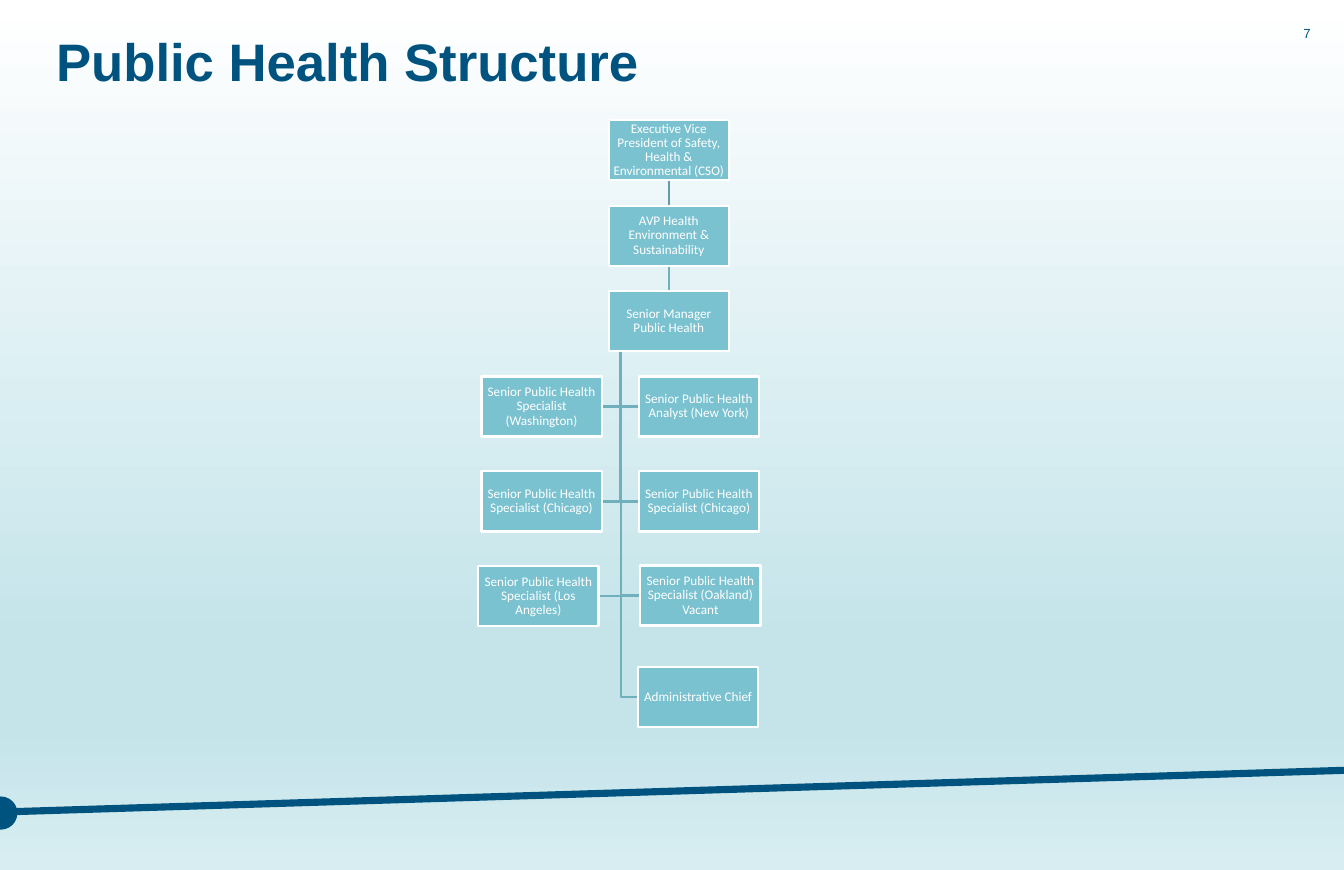
from copy import deepcopy

from lxml import etree
from pptx import Presentation
from pptx.dml.color import RGBColor
from pptx.enum.shapes import MSO_CONNECTOR, MSO_SHAPE
from pptx.enum.text import MSO_ANCHOR, MSO_AUTO_SIZE, PP_ALIGN
from pptx.oxml.ns import qn
from pptx.util import Pt

PX = 9144
STRAIGHT = MSO_CONNECTOR.STRAIGHT
RECTANGLE, OVAL = MSO_SHAPE.RECTANGLE, MSO_SHAPE.OVAL
TOP, MIDDLE = MSO_ANCHOR.TOP, MSO_ANCHOR.MIDDLE
LEFT, CENTER, RIGHT = PP_ALIGN.LEFT, PP_ALIGN.CENTER, PP_ALIGN.RIGHT
NO_AUTOFIT = MSO_AUTO_SIZE.NONE

THEME = {
    "navy": RGBColor.from_string("00537E"),
    "box": RGBColor.from_string("7BC2D0"),
    "link": RGBColor.from_string("70B0BD"),
    "top_link": RGBColor.from_string("639BA7"),
    "white": RGBColor.from_string("FFFFFF"),
    "background": [(0, "FFFFFF"), (0.74, "C4E4EA"), (0.83, "C4E4EA"), (1, "D7EDF1")],
    "heading_font": "Arial",
    "box_font": "Calibri",
    "title_size": Pt(48),
    "small_size": Pt(12),
    "line_width": Pt(2),
    "sweep_width": Pt(6.5),
}

presentation = Presentation()
presentation.slide_width = 1700 * PX
presentation.slide_height = 1100 * PX
slide = presentation.slides.add_slide(presentation.slide_layouts[5])
shapes = slide.shapes


def write(shape, text, font_name, size, color, alignment, anchor, inset=0):
    frame = shape.text_frame
    frame.text = text
    frame.word_wrap = True
    frame.auto_size = NO_AUTOFIT
    frame.vertical_anchor = anchor
    frame.margin_left = frame.margin_right = inset * PX
    frame.margin_top = frame.margin_bottom = inset * PX
    paragraph = frame.paragraphs[0]
    paragraph.alignment = alignment
    font = paragraph.runs[0].font
    font.name, font.size, font.color.rgb = font_name, size, color
    return paragraph


def draw_line(start, end, color, width):
    x1, y1, x2, y2 = (value * PX for value in (*start, *end))
    connector = shapes.add_connector(STRAIGHT, x1, y1, x2, y2)
    connector.line.color.rgb = color
    connector.line.width = width
    etree.SubElement(connector.element.spPr, qn("a:effectLst"))


background_fill = slide.background.fill
background_fill.gradient()
background_fill.gradient_angle = 270
stop_list = slide.element.find(".//" + qn("a:gsLst"))
while len(stop_list) < len(THEME["background"]):
    stop_list.append(deepcopy(stop_list[0]))
for stop, (position, color) in zip(background_fill.gradient_stops, THEME["background"]):
    stop.position = position
    stop.color.rgb = RGBColor.from_string(color)

draw_line((-7, 1027), (1700, 974), THEME["navy"], THEME["sweep_width"])
dot = shapes.add_shape(OVAL, -20 * PX, 1007 * PX, 42 * PX, 42 * PX)
dot.shadow.inherit = False
dot.fill.solid()
dot.fill.fore_color.rgb = THEME["navy"]
dot.line.fill.background()

title = shapes.title
title.left, title.top, title.width, title.height = 71 * PX, 36 * PX, 1471 * PX, 74 * PX
heading = write(title, "Public Health Structure", THEME["heading_font"],
                THEME["title_size"], THEME["navy"], LEFT, TOP)
heading.runs[0].font.bold = True

page_number = shapes.add_textbox(1602 * PX, 32 * PX, 56 * PX, 59 * PX)
write(page_number, "7", THEME["heading_font"], THEME["small_size"],
      THEME["navy"], RIGHT, TOP)

BOX_WIDTH, BOX_HEIGHT = 152, 76
CHAIN_LEFT, CHAIN_TOP, CHAIN_STEP = 770, 152, 108
TRUNK_X = 785
chain = [
    "Executive Vice President of Safety, Health & Environmental (CSO)",
    "AVP Health Environment & Sustainability",
    "Senior Manager Public Health",
]
reports = [
    (808, 476, "Senior Public Health Analyst (New York)"),
    (609, 476, "Senior Public Health Specialist (Washington)"),
    (808, 596, "Senior Public Health Specialist (Chicago)"),
    (609, 596, "Senior Public Health Specialist (Chicago)"),
    (605, 716, "Senior Public Health Specialist (Los Angeles)"),
    (810, 715, "Senior Public Health Specialist (Oakland) Vacant"),
    (807, 843, "Administrative Chief"),
]
managers = [(CHAIN_LEFT, CHAIN_TOP + level * CHAIN_STEP, role)
            for level, role in enumerate(chain)]
trunk_top = managers[-1][1] + BOX_HEIGHT

for left, top, role in reports:
    edge = left if left > TRUNK_X else left + BOX_WIDTH
    middle = top + BOX_HEIGHT // 2
    builder = shapes.build_freeform(TRUNK_X, trunk_top, scale=PX)
    builder.add_line_segments([(TRUNK_X, middle), (edge, middle)], close=False)
    branch = builder.convert_to_shape()
    branch.shadow.inherit = False
    branch.fill.background()
    branch.line.color.rgb = THEME["link"]
    branch.line.width = THEME["line_width"]

chain_x = CHAIN_LEFT + BOX_WIDTH // 2
for (left, top, role), color in zip(managers, (THEME["top_link"], THEME["link"])):
    draw_line((chain_x, top + BOX_HEIGHT), (chain_x, top + CHAIN_STEP),
              color, THEME["line_width"])

for left, top, role in managers + reports:
    box = shapes.add_shape(RECTANGLE, left * PX, top * PX, BOX_WIDTH * PX, BOX_HEIGHT * PX)
    box.shadow.inherit = False
    box.fill.solid()
    box.fill.fore_color.rgb = THEME["box"]
    box.line.color.rgb = THEME["white"]
    box.line.width = THEME["line_width"]
    label = write(box, role, THEME["box_font"], THEME["small_size"],
                  THEME["white"], CENTER, MIDDLE, inset=1)
    label.line_spacing = 0.9

presentation.save("out.pptx")
